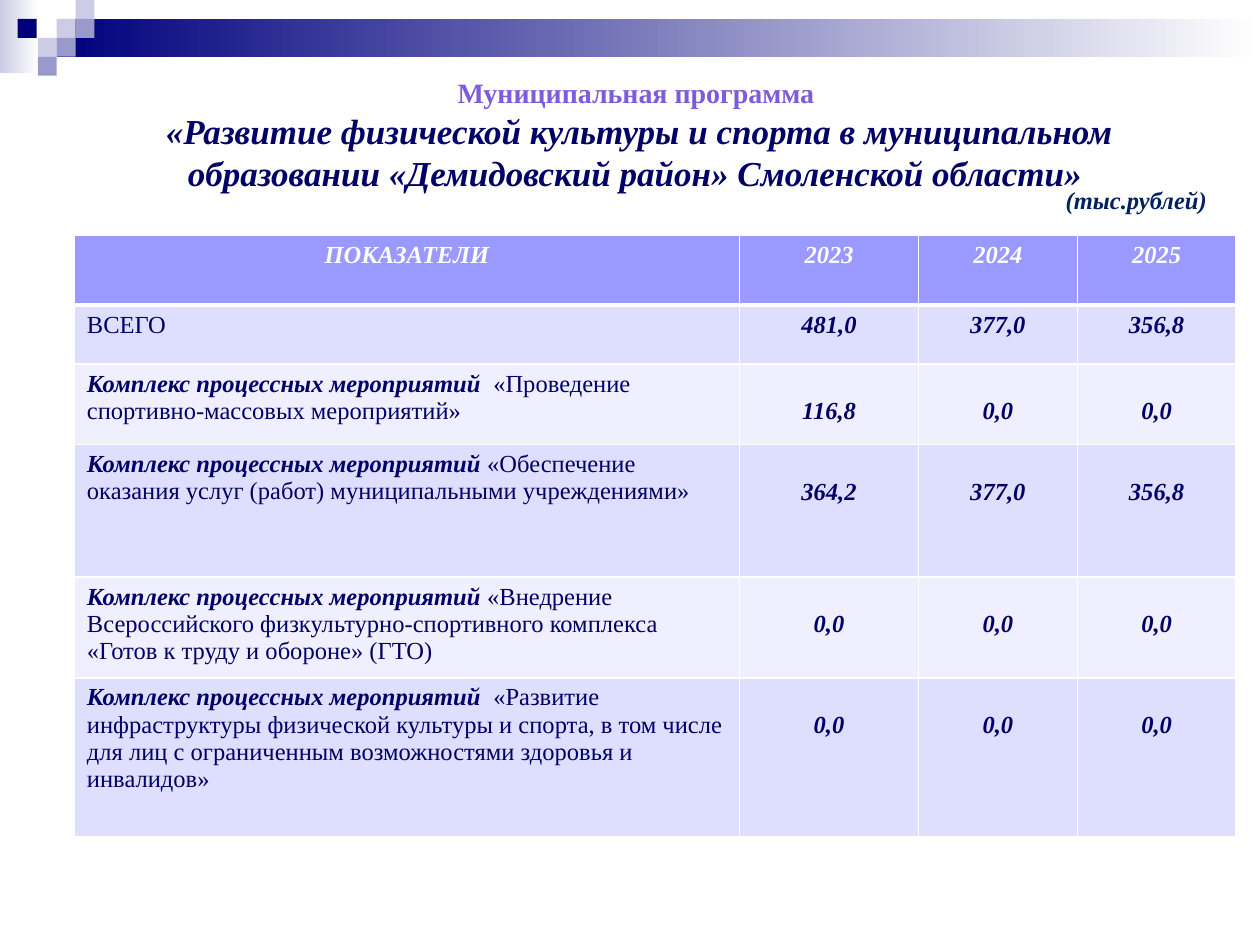
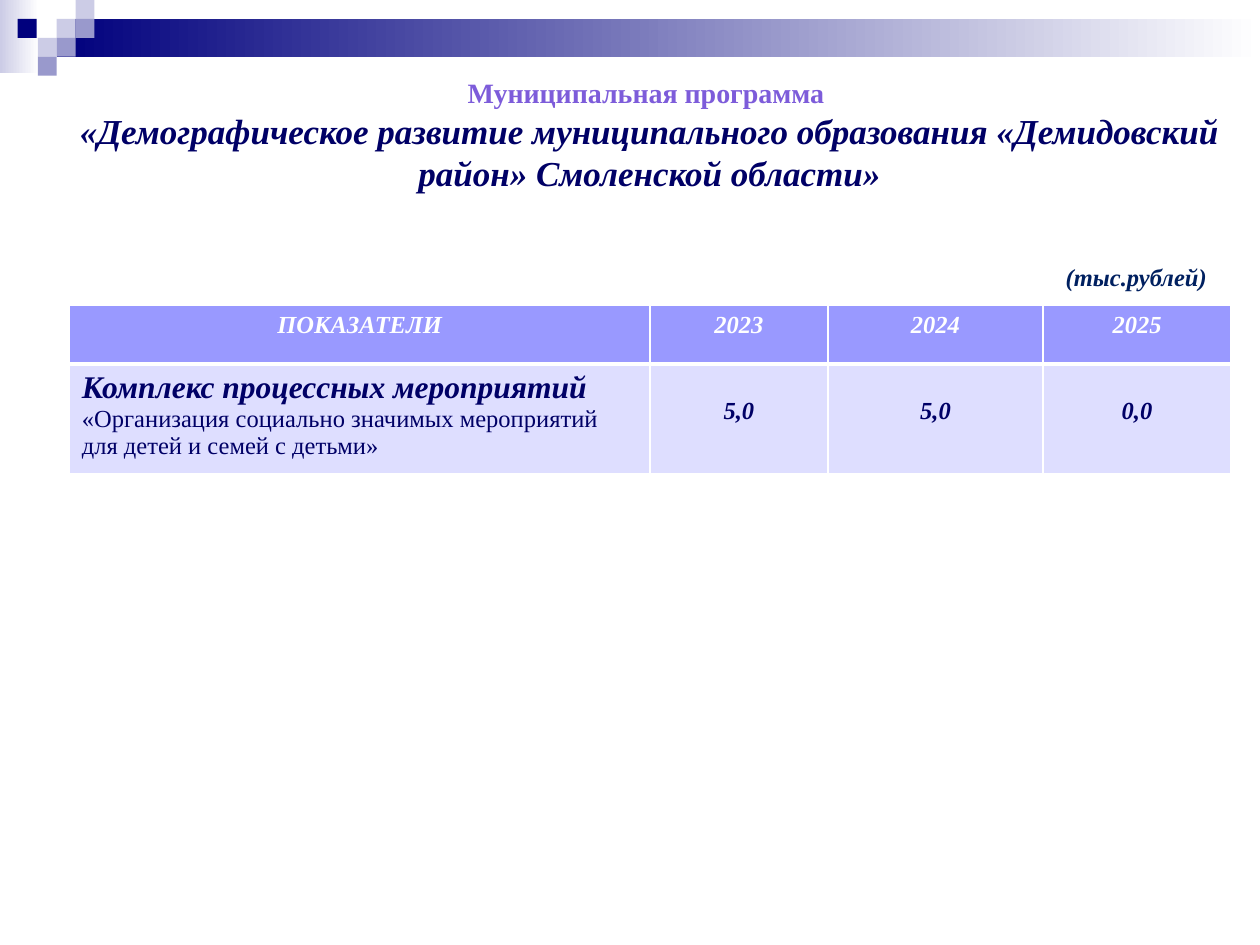
from dataclasses import dataclass

from lxml.etree import SubElement
from pptx import Presentation
from pptx.dml.color import RGBColor
from pptx.enum.shapes import MSO_SHAPE
from pptx.enum.text import MSO_ANCHOR, MSO_AUTO_SIZE, PP_ALIGN
from pptx.oxml.ns import qn
from pptx.util import Inches, Pt


@dataclass(frozen=True)
class Theme:
    font: str = "Times New Roman"
    navy: str = "000066"
    violet: str = "7D5CDA"
    unit: str = "002060"
    white: str = "FFFFFF"
    header: str = "9999FF"
    bands: tuple = ("DEDEFF", "EFEFFF")
    dark: str = "00007D"
    mid: str = "9999CC"
    light: str = "CCCCE6"
    kicker_size: int = 16
    title_size: int = 20
    body_size: int = 14
    thin: int = 1
    thick: int = 3


T = Theme()
SQUARE = 0.15
VALUE_TOP = 0.27  # values sit one text line below the top of their row
KICKER = "Муниципальная программа "
UNIT = "(тыс.рублей)"
HEADER = ("ПОКАЗАТЕЛИ", "2023", "2024", "2025")
MEASURES = "Комплекс процессных мероприятий"

# left, top, width, height, colour, fades to white
DECOR = [
    (0, 0, 0.31, 0.58, T.light, True),
    (0.45, 0.15, 9.55, 0.3, T.dark, True),
] + [(x, y, SQUARE, SQUARE, color, False) for x, y, color in [
    (0.45, 0.15, T.light), (0.6, 0, T.light), (0.6, 0.15, T.mid),
    (0.3, 0.3, T.light), (0.14, 0.15, T.dark), (0.45, 0.3, T.mid),
    (0.3, 0.45, T.mid),
]]

# Table rows: label, name, values
PROGRAMS = [
    {
        "title": "«Развитие физической культуры и спорта в муниципальном "
                 "образовании «Демидовский район» Смоленской области» ",
        "title_box": (0.78, 0.55, 8.59, 1.04),
        "unit_top": 1.42,
        "table_at": (0.59, 1.87),
        "cols": (5.28, 1.42, 1.26, 1.26),
        "row_heights": (0.55, 0.47, 0.64, 1.05, 0.8, 1.26),
        "label_size": T.body_size,
        "rows": [
            ("", "ВСЕГО", ("481,0", "377,0", "356,8")),
            (MEASURES, "  «Проведение спортивно-массовых мероприятий»",
             ("116,8", "0,0", "0,0")),
            (MEASURES, " «Обеспечение оказания услуг (работ) "
                       "муниципальными учреждениями»",
             ("364,2", "377,0", "356,8")),
            (MEASURES, " «Внедрение Всероссийского физкультурно-спортивного "
                       "комплекса «Готов к труду и обороне» (ГТО)",
             ("0,0", "0,0", "0,0")),
            (MEASURES, "  «Развитие инфраструктуры физической культуры и "
                       "спорта, в том числе для лиц с ограниченным "
                       "возможностями здоровья и инвалидов»",
             ("0,0", "0,0", "0,0")),
        ],
    },
    {
        "title": "«Демографическое развитие муниципального образования "
                 "«Демидовский район» Смоленской области»",
        "title_box": (0.31, 0.55, 9.69, 1.04),
        "unit_top": 2.03,
        "table_at": (0.55, 2.42),
        "cols": (4.61, 1.41, 1.71, 1.49),
        "row_heights": (0.47, 0.87),
        "label_size": 18,
        "rows": [
            (MEASURES, " «Организация социально значимых мероприятий "
                       "для детей и семей с детьми»", ("5,0", "5,0", "0,0")),
        ],
    },
]


def add_run(p, text, size=T.body_size, color=T.navy, bold=True, italic=True):
    r = p.add_run()
    r.text = text
    r.font.name = T.font
    r.font.size = Pt(size)
    r.font.color.rgb = RGBColor.from_string(color)
    r.font.bold, r.font.italic = bold, italic


def add_decor(slide, layout):
    """Draw the corner blocks and move them to the layout, behind everything."""
    tree = layout.shapes.element
    first_id = max(s.shape_id for s in layout.shapes) + 1
    for i, (x, y, w, h, color, fades) in enumerate(DECOR):
        sp = slide.shapes.add_shape(MSO_SHAPE.RECTANGLE, Inches(x), Inches(y),
                                    Inches(w), Inches(h))
        sp.shadow.inherit = False
        sp.line.fill.background()
        if fades:
            sp.fill.gradient()
            sp.fill.gradient_angle = 0
            for stop, rgb in zip(sp.fill.gradient_stops, (color, T.white)):
                stop.color.rgb = RGBColor.from_string(rgb)
        else:
            sp.fill.solid()
            sp.fill.fore_color.rgb = RGBColor.from_string(color)
        sp.element.nvSpPr.cNvPr.set("id", str(first_id + i))
        tree.insert(2 + i, sp.element)


def add_title(slide, text, box):
    title = slide.shapes.title
    title.left, title.top, title.width, title.height = map(Inches, box)
    tf = title.text_frame
    tf.auto_size = MSO_AUTO_SIZE.NONE
    tf.vertical_anchor = MSO_ANCHOR.TOP
    kicker, name = tf.paragraphs[0], tf.add_paragraph()
    kicker.alignment = name.alignment = PP_ALIGN.CENTER
    add_run(kicker, KICKER, size=T.kicker_size, color=T.violet, italic=False)
    add_run(name, text, size=T.title_size)


def add_unit(slide, top):
    tf = slide.shapes.add_textbox(Inches(8.36), Inches(top), Inches(1.33),
                                  Inches(0.34)).text_frame
    tf.word_wrap = False
    add_run(tf.paragraphs[0], UNIT, color=T.unit)


def style_cell(cell, fill, top, bottom):
    """Fill the cell and give it white borders; top and bottom are points."""
    tcPr = cell._tc.get_or_add_tcPr()
    for side, width in zip("LRTB", (T.thin, T.thin, top, bottom)):
        ln = SubElement(tcPr, qn(f"a:ln{side}"), w=str(Pt(width)))
        SubElement(SubElement(ln, qn("a:solidFill")), qn("a:srgbClr"),
                   val=T.white)
    cell.fill.solid()
    cell.fill.fore_color.rgb = RGBColor.from_string(fill)


def add_indicators(slide, program):
    heights, cols, rows = (program[k] for k in ("row_heights", "cols", "rows"))
    left, top = program["table_at"]
    table = slide.shapes.add_table(
        len(heights), len(cols), Inches(left), Inches(top),
        Inches(sum(cols)), Inches(sum(heights))).table
    table.horz_banding = False
    for col, width in zip(table.columns, cols):
        col.width = Inches(width)
    for row, height in zip(table.rows, heights):
        row.height = Inches(height)

    for cell, text in zip(table.rows[0].cells, HEADER):
        style_cell(cell, T.header, T.thin, T.thick)
        p = cell.text_frame.paragraphs[0]
        p.alignment = PP_ALIGN.CENTER
        add_run(p, text, color=T.white)

    for i, (label, name, values) in enumerate(rows):
        cells = list(table.rows[i + 1].cells)
        for cell in cells:
            style_cell(cell, T.bands[i % 2], T.thin if i else T.thick, T.thin)
        p = cells[0].text_frame.paragraphs[0]
        if label:
            add_run(p, label, size=program["label_size"])
        add_run(p, name, bold=False, italic=False)
        for cell, value in zip(cells[1:], values):
            if label:
                cell.margin_top = Inches(VALUE_TOP)
            p = cell.text_frame.paragraphs[0]
            p.alignment = PP_ALIGN.CENTER
            add_run(p, value)


def main():
    prs = Presentation()
    prs.slide_width, prs.slide_height = Inches(10), Inches(7.5)
    layout = prs.slide_layouts.get_by_name("Title Only")
    for i, program in enumerate(PROGRAMS):
        slide = prs.slides.add_slide(layout)
        if i == 0:
            add_decor(slide, layout)
        add_title(slide, program["title"], program["title_box"])
        add_indicators(slide, program)
        add_unit(slide, program["unit_top"])
    prs.save("out.pptx")


if __name__ == "__main__":
    main()
